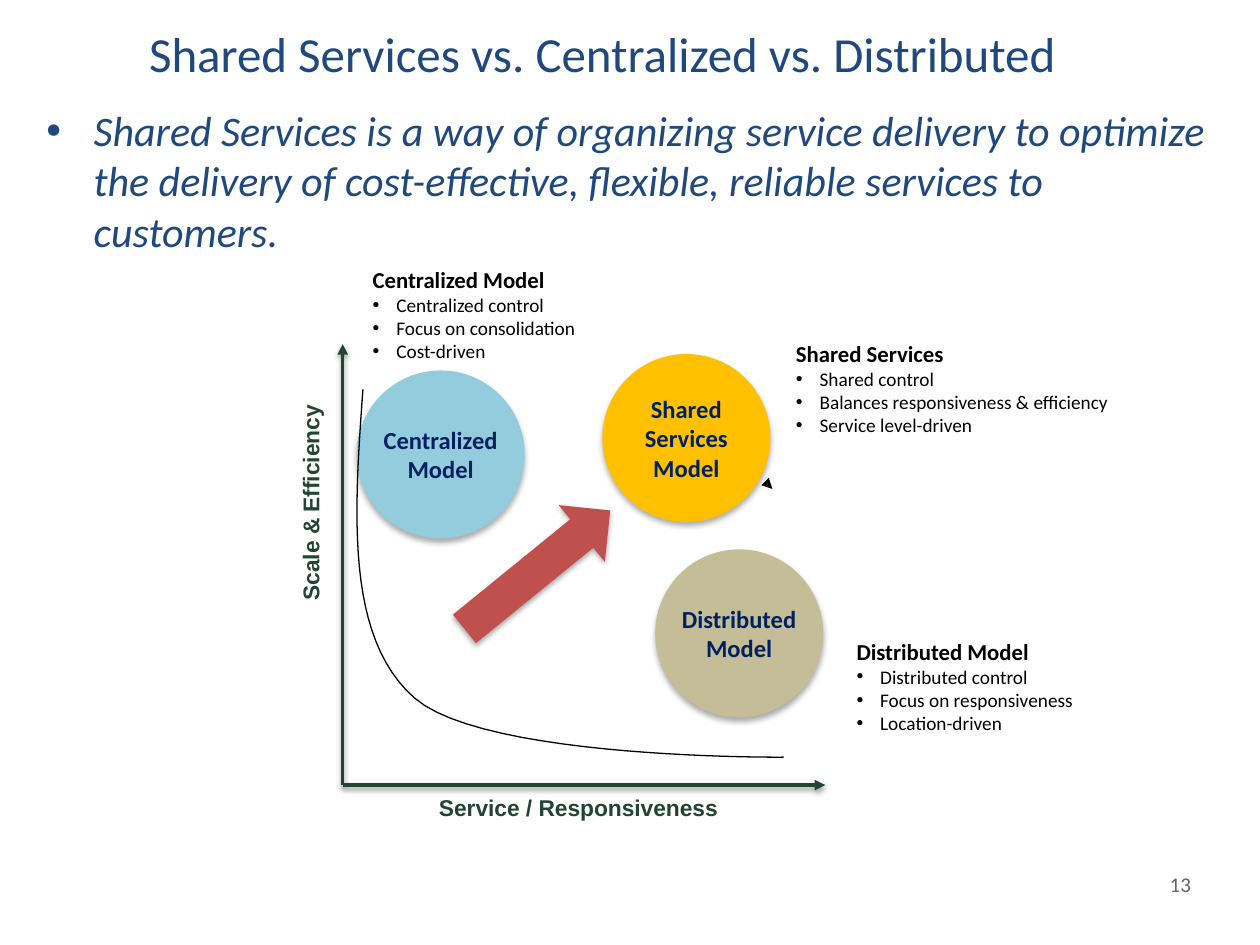
from dataclasses import dataclass
from typing import NamedTuple

from lxml.etree import SubElement
from pptx import Presentation
from pptx.dml.color import RGBColor as Rgb
from pptx.enum.shapes import MSO_CONNECTOR as Link
from pptx.enum.shapes import MSO_SHAPE as Kind
from pptx.enum.text import MSO_ANCHOR as Anchor
from pptx.enum.text import PP_ALIGN as Align
from pptx.oxml.ns import qn
from pptx.util import Pt


@dataclass(frozen=True)
class Theme:
    sans: str = "Calibri"
    axis_font: str = "Arial"
    blue: str = "1F497D"
    navy: str = "002060"
    green: str = "224433"
    black: str = "000000"
    gray: str = "666666"
    gold: str = "FFC000"
    aqua: str = "93CDDD"
    tan: str = "C4BD97"
    red: str = "C0504D"
    title: float = 28
    lead: float = 24
    disc: float = 14
    head: float = 13
    page: float = 12
    item: float = 11


class Box(NamedTuple):
    x: float
    y: float
    w: float
    h: float

    def pts(self) -> list:
        return [Pt(n) for n in self]


class Glow(NamedTuple):
    alpha: int
    blur: float
    dist: float


class Disc(NamedTuple):
    x: float
    y: float
    fill: str
    rows: list


class Note(NamedTuple):
    box: Box
    head: str
    items: list


class Axis(NamedTuple):
    end: tuple
    box: Box
    text: str
    turn: float


T = Theme()
SIZE = 96
ZERO = (195.8, 448.6)
SOFT = Glow(32, 3.5, 2.2)
FIRM = Glow(35, 3.1, 1.8)
DARK = Glow(38, 3.1, 1.6)

DISCS = [
    Disc(344.2, 202.3, T.gold, ["Shared", "Services", "Model"]),
    Disc(203.8, 211.7, T.aqua, ["Centralized\vModel"]),
    Disc(374.4, 313.9, T.tan, ["Distributed\vModel"]),
]
NOTES = [
    Note(Box(205.9, 148.3, 141.8, 63.4), "Centralized Model",
         ["Centralized control", "Focus on consolidation", "Cost-driven"]),
    Note(Box(482.4, 360.7, 154.1, 63.4), "Distributed Model",
         ["Distributed control", "Focus on responsiveness", "Location-driven"]),
    Note(Box(447.8, 190.8, 213.8, 63.4), "Shared Services",
         ["Shared control", "Balances responsiveness & efficiency",
          "Service level-driven"]),
]
AXES = [
    Axis((195.8, 196.6), Box(56.9, 275.8, 241.2, 23), "Scale & Efficiency", 270),
    Axis((471.6, 448.6), Box(195.8, 450, 269.3, 23), "Service / Responsiveness", 0),
]
CURVE = [
    [(207.4, 222.5), (202.3, 293), (197.3, 364.3), (236.9, 398.9)],
    [(236.9, 398.9), (277.2, 434.2), (447.8, 432.7), (447.8, 432.7)],
]


def write(frame, rows: list, *, size: float, color: str, font: str = T.sans,
          bold: bool = False, slant: bool = False, align=Align.LEFT,
          dent: float = 0, gap: float = 0, more: bool = False) -> None:
    for i, row in enumerate(rows):
        para = frame.add_paragraph() if more or i else frame.paragraphs[0]
        para.text = row
        para.alignment = align
        para.space_before = Pt(gap)
        for run in para.runs:
            face = run.font
            face.name, face.size = font, Pt(size)
            face.bold, face.italic = bold, slant
            face.color.rgb = Rgb.from_string(color)
        if dent:
            props = para._p.get_or_add_pPr()
            props.set("marL", str(Pt(dent)))
            props.set("indent", str(-Pt(dent)))
            SubElement(props, qn("a:buFont"), typeface="Arial")
            SubElement(props, qn("a:buChar"), char="•")


def label(slide, box: Box, wrap: bool = True, anchor=Anchor.TOP, turn: float = 0):
    shape = slide.shapes.add_textbox(*box.pts())
    shape.rotation = turn
    frame = shape.text_frame
    frame.word_wrap, frame.vertical_anchor = wrap, anchor
    return frame


def shade(props, glow: Glow | None) -> None:
    fx = props.find(qn("a:effectLst"))
    if fx is None:
        fx = SubElement(props, qn("a:effectLst"))
    if glow:
        cast = SubElement(fx, qn("a:outerShdw"), blurRad=str(Pt(glow.blur)),
                          dist=str(Pt(glow.dist)), dir="5400000", rotWithShape="0")
        tint = SubElement(cast, qn("a:srgbClr"), val=T.black)
        SubElement(tint, qn("a:alpha"), val=str(glow.alpha * 1000))


def solid(slide, kind, box: Box, fill: str, glow: Glow):
    shape = slide.shapes.add_shape(kind, *box.pts())
    shape.fill.solid()
    shape.fill.fore_color.rgb = Rgb.from_string(fill)
    shape.line.fill.background()
    shape.shadow.inherit = False
    shade(shape._element.spPr, glow)
    return shape


def arrow(slide, start: tuple, end: tuple, color: str, width: float,
          glow: Glow | None = None) -> None:
    link = slide.shapes.add_connector(
        Link.STRAIGHT, *[Pt(n) for n in start + end])
    link.line.color.rgb = Rgb.from_string(color)
    link.line.width = Pt(width)
    SubElement(link.line._get_or_add_ln(), qn("a:tailEnd"), type="triangle")
    shade(link._element.spPr, glow)


def disc(slide, data: Disc) -> None:
    shape = solid(slide, Kind.OVAL, Box(data.x, data.y, SIZE, SIZE), data.fill, SOFT)
    frame = shape.text_frame
    frame.word_wrap, frame.vertical_anchor = False, Anchor.MIDDLE
    frame.margin_left = frame.margin_right = Pt(3)
    frame.margin_top = frame.margin_bottom = Pt(3)
    write(frame, data.rows, size=T.disc, color=T.navy, bold=True, align=Align.CENTER)


def note(slide, data: Note) -> None:
    frame = label(slide, data.box, wrap=False)
    write(frame, [data.head], size=T.head, color=T.black, bold=True)
    write(frame, data.items, size=T.item, color=T.black, dent=13.5, more=True)


def axis(slide, data: Axis) -> None:
    arrow(slide, ZERO, data.end, T.green, 2, DARK)
    write(label(slide, data.box, turn=data.turn), [data.text], size=T.head,
          color=T.green, font=T.axis_font, bold=True, align=Align.CENTER)


def bend(ends: list, steps: int = 24) -> list:
    a, b, c, d = ends
    return [tuple(Pt((1 - t) ** 3 * p + 3 * t * (1 - t) ** 2 * q
                     + 3 * t * t * (1 - t) * r + t ** 3 * s)
                  for p, q, r, s in zip(a, b, c, d))
            for t in (n / steps for n in range(1, steps + 1))]


def curve(slide) -> None:
    x, y = CURVE[0][0]
    pen = slide.shapes.build_freeform(Pt(x), Pt(y))
    pen.add_line_segments([dot for part in CURVE for dot in bend(part)], close=False)
    shape = pen.convert_to_shape()
    shape.fill.background()
    shape.line.color.rgb = Rgb.from_string(T.black)
    shape.line.width = Pt(0.75)
    shape.shadow.inherit = False


def main() -> None:
    deck = Presentation()
    deck.slide_width, deck.slide_height = Pt(720), Pt(540)
    slide = deck.slides.add_slide(deck.slide_layouts[5])
    title = slide.shapes.title
    title.left, title.top, title.width, title.height = Box(59, 18, 570.2, 32.4).pts()
    title.text_frame.vertical_anchor = Anchor.BOTTOM
    write(title.text_frame, ["Shared Services vs. Centralized vs. Distributed"],
          size=T.title, color=T.blue, align=Align.CENTER)
    write(label(slide, Box(19.4, 56.2, 684, 94.3)),
          ["Shared Services is a way of organizing service delivery to optimize the "
           "delivery of cost-effective, flexible, reliable services to customers."],
          size=T.lead, color=T.blue, slant=True, dent=27, gap=4.8)
    arrow(slide, (441, 279), (441.4, 279.4), T.black, 0.75)
    for data in DISCS:
        disc(slide, data)
    solid(slide, Kind.RIGHT_ARROW, Box(253.4, 304.6, 107.3, 41.8),
          T.red, FIRM).rotation = 320.9
    for data in AXES:
        axis(slide, data)
    curve(slide)
    for data in NOTES:
        note(slide, data)
    write(label(slide, Box(554.4, 498.2, 133.2, 14.4), anchor=Anchor.MIDDLE), ["13"],
          size=T.page, color=T.gray, align=Align.RIGHT)
    deck.save("out.pptx")


if __name__ == "__main__":
    main()
